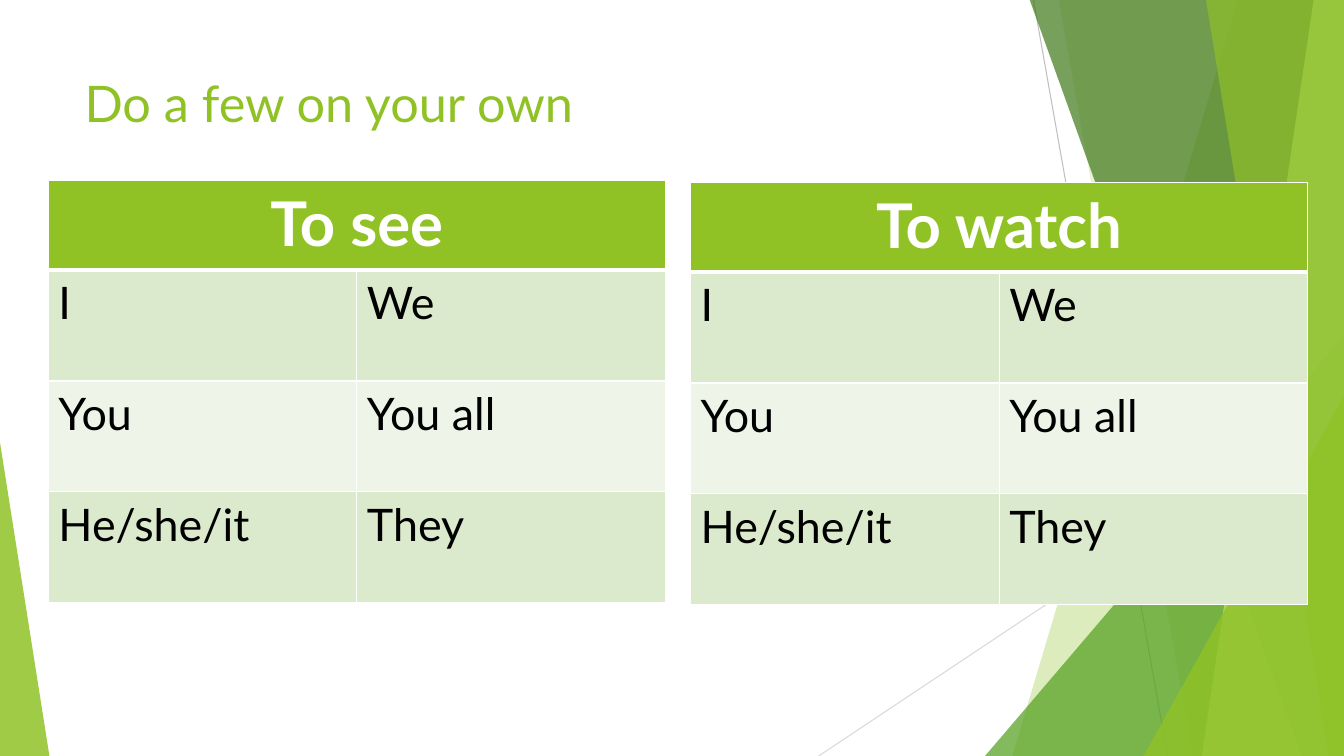
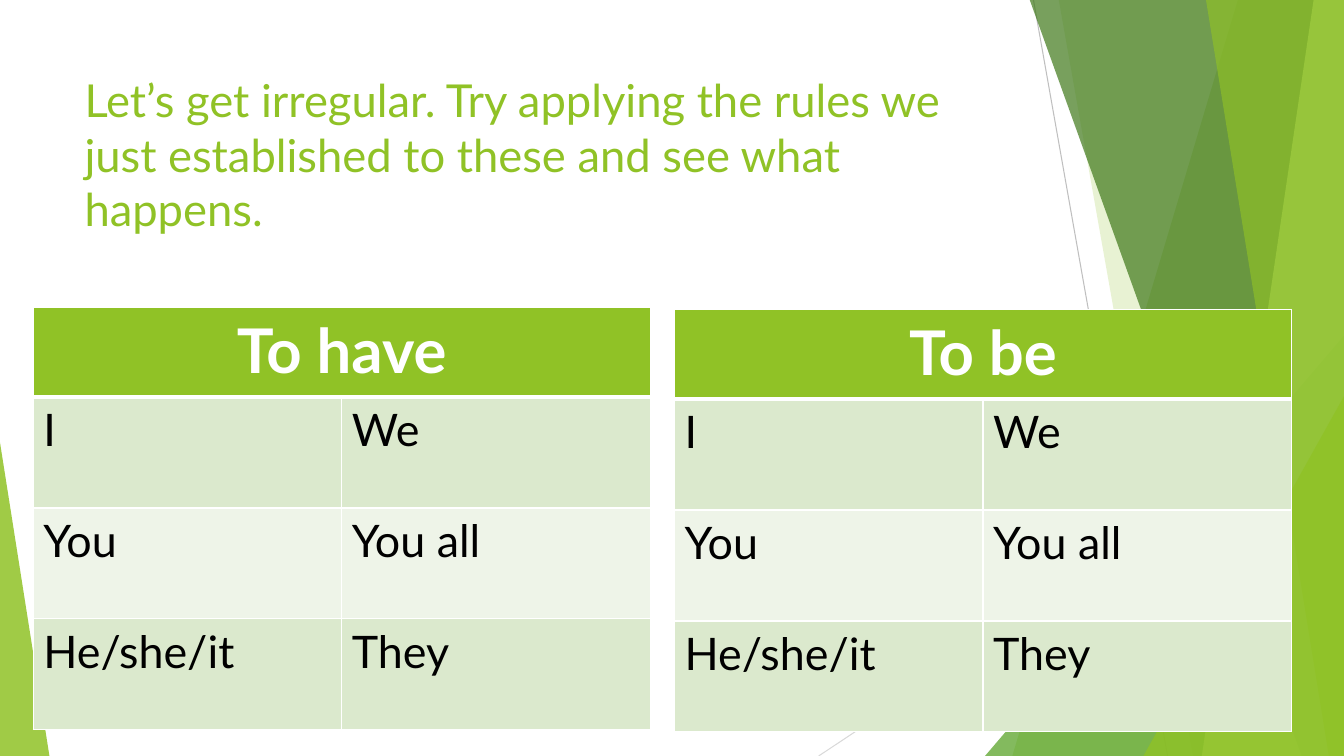
from dataclasses import dataclass

from lxml import etree
from pptx import Presentation
from pptx import util as u
from pptx.dml.color import RGBColor
from pptx.enum import shapes, text
from pptx.oxml.ns import qn

SCALE = 9144
SLIDE_W, SLIDE_H = 1333, 750
FONT = "Lato"
LIME, GREEN, FOREST, PALE_LIME = "90C226", "54A021", "3F7819", "C0E474"
WHITE, BLACK = "FFFFFF", "000000"
BAND_DARK, BAND_LIGHT = "DBE9CD", "EEF4E8"
COLUMN_W, HEADER_H, ROW_H = 306, 89, 110
PRONOUNS = [("I", "We"), ("You", "You all"), ("He/she/it", "They")]


@dataclass(frozen=True)
class Ray:
    start: tuple[int, int]
    end: tuple[int, int]
    color: str


@dataclass(frozen=True)
class Shard:
    top_left: int
    top_right: int
    bottom_right: int
    bottom_left: int
    color: str
    opacity: int


@dataclass(frozen=True)
class Wedge:
    left: int
    top: int
    width: int
    apex: int
    color: str
    opacity: int


@dataclass(frozen=True)
class VerbTable:
    verb: str
    left: int
    top: int


@dataclass(frozen=True)
class Exercise:
    title: str
    title_size: float
    tables: tuple[VerbTable, ...]


FACETS = [
    Ray((1025, 0), (1158, 750), "BFBFBF"),
    Ray((1333, 403), (812, 750), "D9D9D9"),
    Shard(1228, 1333, 1333, 1004, LIME, 30),
    Shard(1050, 1333, 1333, 1183, LIME, 20),
    Wedge(977, 333, 356, 1, GREEN, 72),
    Shard(1021, 1333, 1333, 1291, FOREST, 70),
    Shard(1303, 1333, 1333, 1192, PALE_LIME, 70),
    Shard(1196, 1333, 1333, 1318, LIME, 65),
    Wedge(1134, 393, 199, 1, LIME, 80),
    Wedge(0, 439, 49, 0, LIME, 85),
]

EXERCISES = [
    Exercise("Do a few on your own", 36,
             (VerbTable("To see", 48, 179), VerbTable("To watch", 685, 181))),
    Exercise("Let’s get irregular. Try applying the rules we just established "
             "to these and see what happens.", 32.4,
             (VerbTable("To have", 33, 305), VerbTable("To be", 669, 307))),
]


def px(length: int) -> int:
    return u.Emu(length * SCALE)


def rgb(value: str) -> RGBColor:
    return RGBColor.from_string(value)


def write(frame, content: str, *, size: float, color: str, bold: bool = False,
          align=text.PP_ALIGN.LEFT) -> None:
    frame.word_wrap = True
    paragraph = frame.paragraphs[0]
    paragraph.alignment = align
    run = paragraph.add_run()
    run.text = content
    run.font.name = FONT
    run.font.size = u.Pt(size)
    run.font.bold = bold
    run.font.color.rgb = rgb(color)


def paint(facet, color: str, opacity: int) -> None:
    facet.shadow.inherit = False
    facet.fill.solid()
    facet.fill.fore_color.rgb = rgb(color)
    facet.line.fill.background()
    tint = facet.element.spPr.find(".//" + qn("a:srgbClr"))
    etree.SubElement(tint, qn("a:alpha"), val=str(opacity * 1000))


def draw_ray(group, ray: Ray) -> None:
    line = group.shapes.add_connector(
        shapes.MSO_CONNECTOR.STRAIGHT, *map(px, ray.start + ray.end))
    line.line.color.rgb = rgb(ray.color)
    line.line.width = u.Pt(0.75)
    etree.SubElement(line.element.spPr, qn("a:effectLst"))


def draw_shard(group, shard: Shard) -> None:
    outline = group.shapes.build_freeform(shard.top_left, -1, scale=SCALE)
    outline.add_line_segments([(shard.top_right, -1), (shard.bottom_right, SLIDE_H),
                               (shard.bottom_left, SLIDE_H)], close=True)
    paint(outline.convert_to_shape(), shard.color, shard.opacity)


def draw_wedge(group, wedge: Wedge) -> None:
    triangle = group.shapes.add_shape(
        shapes.MSO_SHAPE.ISOSCELES_TRIANGLE, px(wedge.left), px(wedge.top),
        px(wedge.width), px(SLIDE_H - wedge.top))
    triangle.adjustments[0] = wedge.apex
    paint(triangle, wedge.color, wedge.opacity)


def draw_facets(slide) -> None:
    group = slide.shapes.add_group_shape()
    painters = {Ray: draw_ray, Shard: draw_shard, Wedge: draw_wedge}
    for facet in FACETS:
        painters[type(facet)](group, facet)


def draw_title(slide, content: str, size: float) -> None:
    title = slide.shapes.add_textbox(px(74), px(67), px(940), px(144))
    title.text_frame.vertical_anchor = text.MSO_ANCHOR.TOP
    write(title.text_frame, content, size=size, color=LIME)


def style_cell(cell, fill: str, top: int = 1, bottom: int = 1) -> None:
    cell.fill.solid()
    cell.fill.fore_color.rgb = rgb(fill)
    properties = cell._tc.get_or_add_tcPr()
    edges = {"a:lnL": 1, "a:lnR": 1, "a:lnT": top, "a:lnB": bottom}
    for position, (edge, width) in enumerate(edges.items()):
        border = etree.Element(qn(edge), w=str(u.Pt(width)))
        solid = etree.SubElement(border, qn("a:solidFill"))
        etree.SubElement(solid, qn("a:srgbClr"), val=WHITE)
        properties.insert(position, border)


def draw_verb_table(slide, item: VerbTable) -> None:
    heights = [HEADER_H] + [ROW_H] * len(PRONOUNS)
    table = slide.shapes.add_table(
        len(heights), 2, px(item.left), px(item.top),
        px(2 * COLUMN_W), px(sum(heights))).table
    table.first_row = table.horz_banding = False
    for column in table.columns:
        column.width = px(COLUMN_W)
    for row, height in zip(table.rows, heights):
        row.height = px(height)
    for header in table.rows[0].cells:
        style_cell(header, LIME, bottom=3)
    table.cell(0, 0).merge(table.cell(0, 1))
    write(table.cell(0, 0).text_frame, item.verb, size=44, color=WHITE, bold=True,
          align=text.PP_ALIGN.CENTER)
    for number, pair in enumerate(PRONOUNS, start=1):
        for column, pronoun in enumerate(pair):
            cell = table.cell(number, column)
            style_cell(cell, BAND_DARK if number % 2 else BAND_LIGHT,
                       top=3 if number == 1 else 1)
            write(cell.text_frame, pronoun, size=32, color=BLACK)


def main() -> None:
    deck = Presentation()
    deck.slide_width, deck.slide_height = px(SLIDE_W), px(SLIDE_H)
    for exercise in EXERCISES:
        slide = deck.slides.add_slide(deck.slide_layouts[6])
        draw_facets(slide)
        draw_title(slide, exercise.title, exercise.title_size)
        for item in exercise.tables:
            draw_verb_table(slide, item)
    deck.save("out.pptx")


if __name__ == "__main__":
    main()
